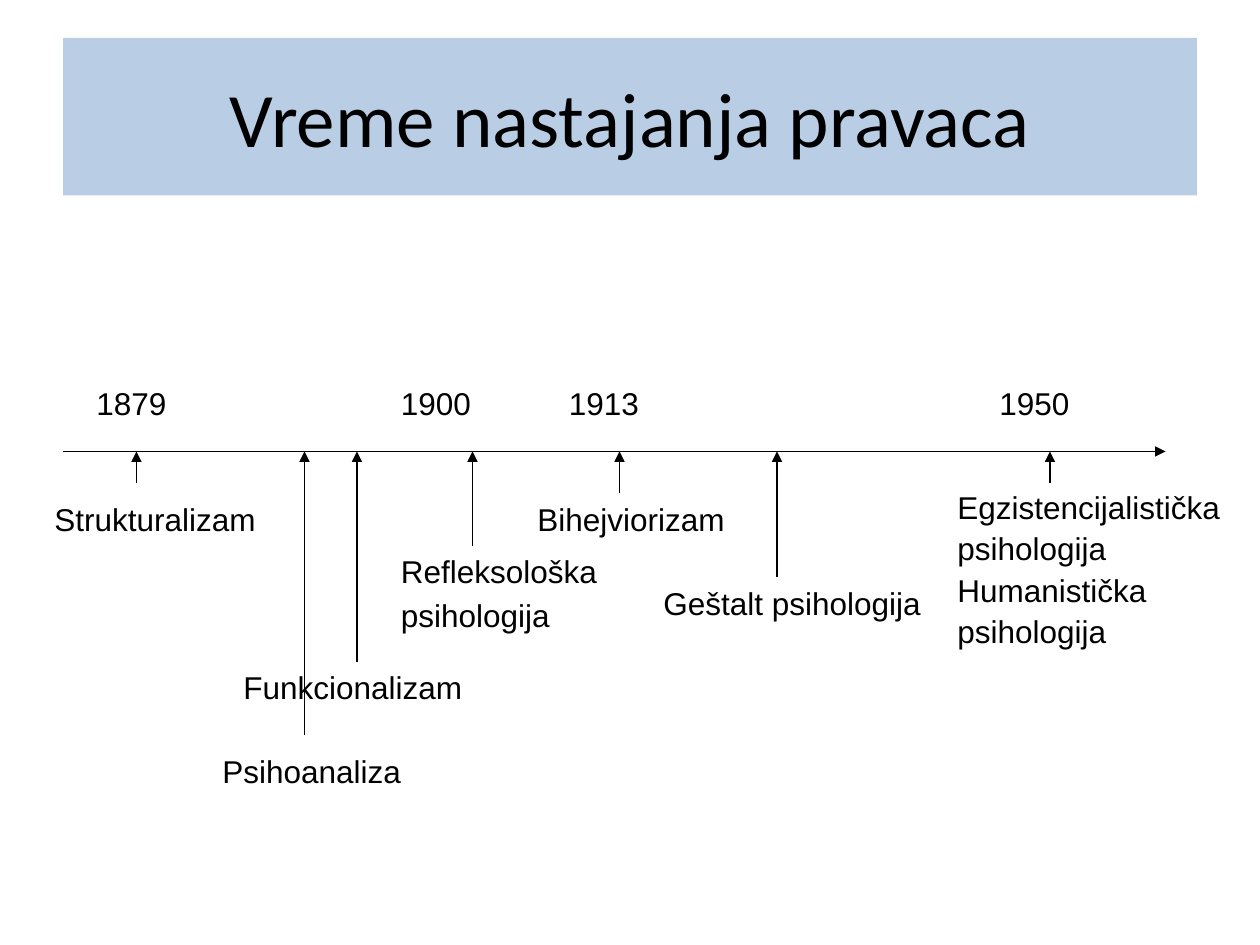
from dataclasses import dataclass

from lxml.etree import SubElement
from pptx import Presentation
from pptx.dml.color import RGBColor
from pptx.enum.shapes import MSO_CONNECTOR as Conn
from pptx.enum.text import MSO_ANCHOR as Anchor, MSO_AUTO_SIZE as AutoSize, PP_ALIGN as Align
from pptx.oxml.ns import qn
from pptx.slide import Slide
from pptx.util import Inches, Pt

BLACK = RGBColor(0x00, 0x00, 0x00)
PALE_BLUE = RGBColor(0xB9, 0xCD, 0xE5)
CELLS_PER_INCH = 12
AXIS_ROW = 43
YEAR_ROW = 36
LINE_ROWS = 4.8


@dataclass(frozen=True)
class Label:
    text: str
    col: float
    row: float
    cols: float
    rows: float = LINE_ROWS
    spacing: float = 1.0


@dataclass(frozen=True)
class Arrow:
    col: float
    row: float
    end_col: float
    end_row: float = AXIS_ROW


YEARS = [
    Label("1900", 37, YEAR_ROW, 10),
    Label("1913", 53, YEAR_ROW, 10),
    Label("1879", 8, YEAR_ROW, 12),
    Label("1950", 94, YEAR_ROW, 13),
]
SCHOOLS = [
    Label("Egzistencijalistička\npsihologija\nHumanistička\npsihologija", 90, 47, 28, 21.4, 0.65),
    Label("Strukturalizam", 4, 47, 22),
    Label("Funkcionalizam", 22, 63, 25),
    Label("Geštalt psihologija", 62, 55, 28),
    Label("Refleksološka\npsihologija", 37, 53, 22, 8, 0.7),
    Label("Bihejviorizam", 50, 47, 22),
    Label("Psihoanaliza", 20, 71, 21),
]
AXIS = Arrow(6, AXIS_ROW, 111)
POINTERS = [
    Arrow(col, row, col)
    for col, row in [(13, 46), (34, 63), (45, 52), (59, 47), (29, 70), (74, 55), (100, 46)]
]


def grid(cells: float) -> int:
    """Convert grid cells to a length."""
    return Inches(cells / CELLS_PER_INCH)


def set_title(s: Slide, text: str) -> None:
    """Fill and place the title placeholder."""
    sp = s.shapes.title
    sp.left, sp.top, sp.width, sp.height = grid(6), grid(3.6), grid(108), grid(15)
    sp.fill.solid()
    sp.fill.fore_color.rgb = PALE_BLUE
    tf = sp.text_frame
    tf.text = text
    tf.vertical_anchor = Anchor.MIDDLE
    p = tf.paragraphs[0]
    p.alignment = Align.CENTER
    font = p.runs[0].font
    font.name, font.size, font.color.rgb = "Calibri", Pt(44), BLACK


def add_label(s: Slide, label: Label) -> None:
    """Write a label of one or more paragraphs."""
    sp = s.shapes.add_textbox(grid(label.col), grid(label.row), grid(label.cols), grid(label.rows))
    tf = sp.text_frame
    tf.text = label.text
    tf.word_wrap = True
    tf.auto_size = AutoSize.SHAPE_TO_FIT_TEXT
    for i, p in enumerate(tf.paragraphs):
        p.line_spacing = label.spacing
        p.space_before = Pt(9.7 if i else 0)
        font = p.runs[0].font
        font.name, font.size, font.color.rgb = "Arial", Pt(18), BLACK


def add_arrow(s: Slide, arrow: Arrow) -> None:
    """Draw a thin line with a triangular head at its end."""
    ends = (arrow.col, arrow.row, arrow.end_col, arrow.end_row)
    sp = s.shapes.add_connector(Conn.STRAIGHT, *map(grid, ends))
    sp.line.color.rgb = BLACK
    sp.line.width = Pt(0.75)
    SubElement(sp.line._get_or_add_ln(), qn("a:tailEnd"), type="triangle")
    SubElement(sp._element.spPr, qn("a:effectLst"))


def main() -> None:
    """Build the timeline slide."""
    prs = Presentation()
    prs.slide_width, prs.slide_height = Inches(10), Inches(7.5)
    s = prs.slides.add_slide(prs.slide_layouts[5])
    set_title(s, "Vreme nastajanja pravaca")
    add_arrow(s, AXIS)
    for label in YEARS + SCHOOLS:
        add_label(s, label)
    for arrow in POINTERS:
        add_arrow(s, arrow)
    prs.save("out.pptx")


if __name__ == "__main__":
    main()
